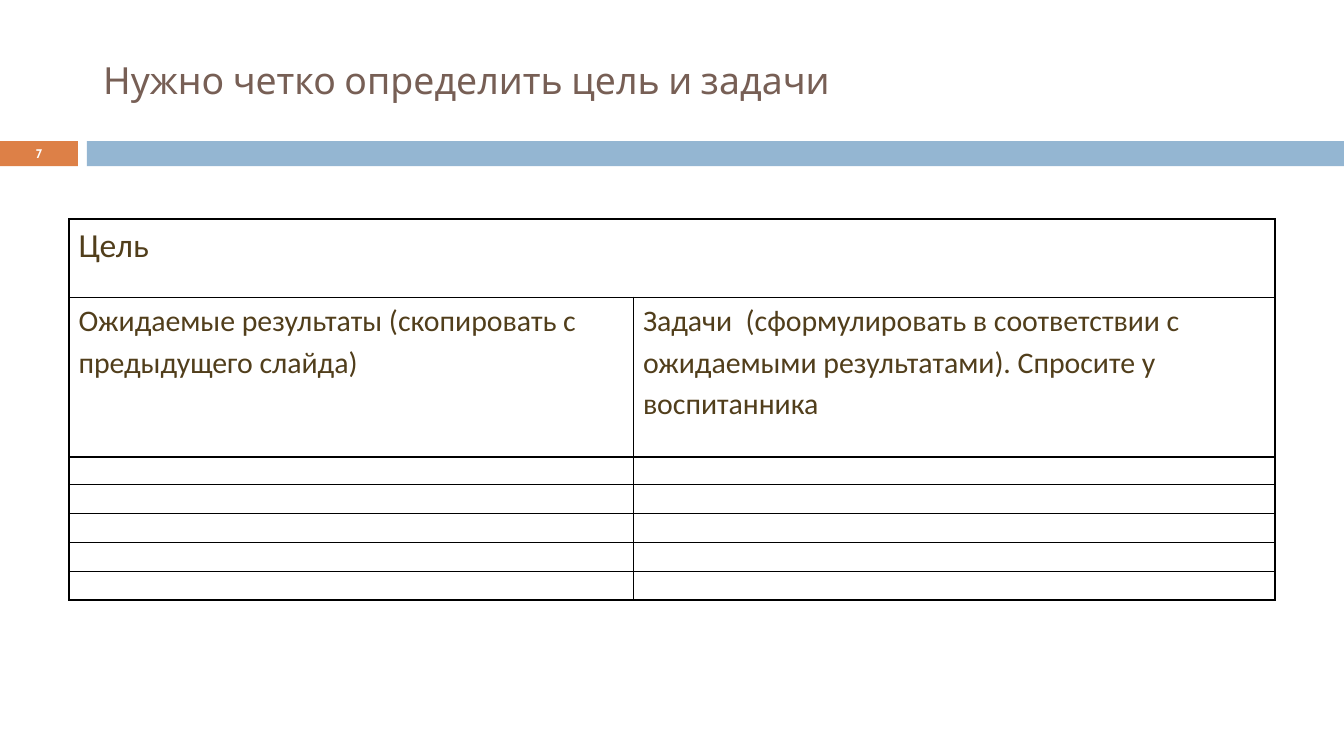
from dataclasses import dataclass

from lxml import etree
from pptx import Presentation
from pptx import util as u
from pptx.dml import color
from pptx.enum import shapes, text
from pptx.oxml import ns

BROWN = "513E1B"
BLACK = "000000"
WHITE = "FFFFFF"
THICK, THIN = 1, 0.5


@dataclass
class Box:
    left: float
    top: float
    width: float
    height: float

    def lengths(self) -> tuple:
        return tuple(u.Pt(n) for n in (self.left, self.top, self.width, self.height))


@dataclass
class Bar:
    box: Box
    fill: str


@dataclass
class Heading:
    row: int
    column: int
    wording: str
    size: float


BARS = [
    Bar(Box(0, 75.6, 41.8, 13.4), "DD8047"),
    Bar(Box(46.6, 75.6, 673.4, 13.4), "94B6D2"),
]
HEADINGS = [
    Heading(0, 0, "Цель", 18),
    Heading(1, 0, "Ожидаемые результаты (скопировать с предыдущего слайда)", 16),
    Heading(1, 1, "Задачи  (сформулировать в соответствии с ожидаемыми результатами). "
            "Спросите у воспитанника", 16),
]
COLUMN_WIDTHS = [302.4, 343.8]
ROW_HEIGHTS = [41.8, 85.7, 14.8] + [15.5] * 4
HEADING_ROWS = 2


def rgb(value: str) -> color.RGBColor:
    return color.RGBColor.from_string(value)


def write(frame, wording: str, *, size: float, fill: str, font: str = "Cabin",
          bold: bool = False, align=text.PP_ALIGN.LEFT, spacing: float = 1.0) -> None:
    frame.word_wrap = True
    paragraph = frame.paragraphs[0]
    paragraph.alignment = align
    paragraph.line_spacing = spacing
    run = paragraph.add_run()
    run.text = wording
    run.font.name = font
    run.font.size = u.Pt(size)
    run.font.bold = bold
    run.font.color.rgb = rgb(fill)


def draw_bar(slide, bar: Bar) -> None:
    strip = slide.shapes.add_shape(shapes.MSO_SHAPE.RECTANGLE, *bar.box.lengths())
    strip.shadow.inherit = False
    strip.fill.solid()
    strip.fill.fore_color.rgb = rgb(bar.fill)
    strip.line.fill.background()


def draw_label(slide, box: Box, wording: str, *, inset: float = 0, **style) -> None:
    frame = slide.shapes.add_textbox(*box.lengths()).text_frame
    frame.margin_left = frame.margin_right = u.Pt(inset)
    frame.margin_top = frame.margin_bottom = 0
    frame.vertical_anchor = text.MSO_ANCHOR.MIDDLE
    write(frame, wording, **style)


def set_border(cell, side: str, width: float) -> None:
    properties = cell._tc.get_or_add_tcPr()
    line = etree.SubElement(properties, ns.qn(f"a:ln{side}"), w=str(u.Pt(width)))
    solid = etree.SubElement(line, ns.qn("a:solidFill"))
    etree.SubElement(solid, ns.qn("a:srgbClr"), val=BLACK)


def format_cell(cell, row: int, column: int) -> None:
    last_row, last_column = len(ROW_HEIGHTS) - 1, len(COLUMN_WIDTHS) - 1
    outer = {
        "L": column == 0 or row == 0,
        "R": column == last_column or row == 0,
        "T": row in (0, HEADING_ROWS),
        "B": row in (HEADING_ROWS - 1, last_row),
    }
    for side, thick in outer.items():
        set_border(cell, side, THICK if thick else THIN)
    cell.fill.solid()
    cell.fill.fore_color.rgb = rgb(WHITE)
    cell.margin_left = cell.margin_right = u.Pt(5.2)
    cell.margin_top = cell.margin_bottom = 0
    if row >= HEADING_ROWS:
        paragraph = cell.text_frame.paragraphs[0]._p
        etree.SubElement(paragraph, ns.qn("a:endParaRPr"), sz="800")


def draw_goal_table(slide) -> None:
    box = Box(36.9, 117.4, sum(COLUMN_WIDTHS), sum(ROW_HEIGHTS))
    goals = slide.shapes.add_table(
        len(ROW_HEIGHTS), len(COLUMN_WIDTHS), *box.lengths()).table
    goals.first_row = goals.horz_banding = False
    for column, width in zip(goals.columns, COLUMN_WIDTHS):
        column.width = u.Pt(width)
    for row, height in zip(goals.rows, ROW_HEIGHTS):
        row.height = u.Pt(height)
    goals.cell(0, 0).merge(goals.cell(0, 1))
    for row in range(len(ROW_HEIGHTS)):
        for column in range(len(COLUMN_WIDTHS)):
            format_cell(goals.cell(row, column), row, column)
    for heading in HEADINGS:
        write(goals.cell(heading.row, heading.column).text_frame, heading.wording,
              size=heading.size, fill=BROWN, font="Calibri", spacing=1.15)


def main() -> None:
    deck = Presentation()
    deck.slide_width, deck.slide_height = u.Pt(720), u.Pt(405)
    slide = deck.slides.add_slide(deck.slide_layouts[6])
    for bar in BARS:
        draw_bar(slide, bar)
    draw_label(slide, Box(48.2, 13.7, 642.2, 58.3),
               "Нужно четко определить цель и задачи",
               inset=7.2, size=20, fill="775F55")
    draw_label(slide, Box(0, 75, 41.8, 14.4), "7", size=6.7, fill=WHITE,
               bold=True, align=text.PP_ALIGN.CENTER)
    draw_goal_table(slide)
    deck.save("out.pptx")


if __name__ == "__main__":
    main()
